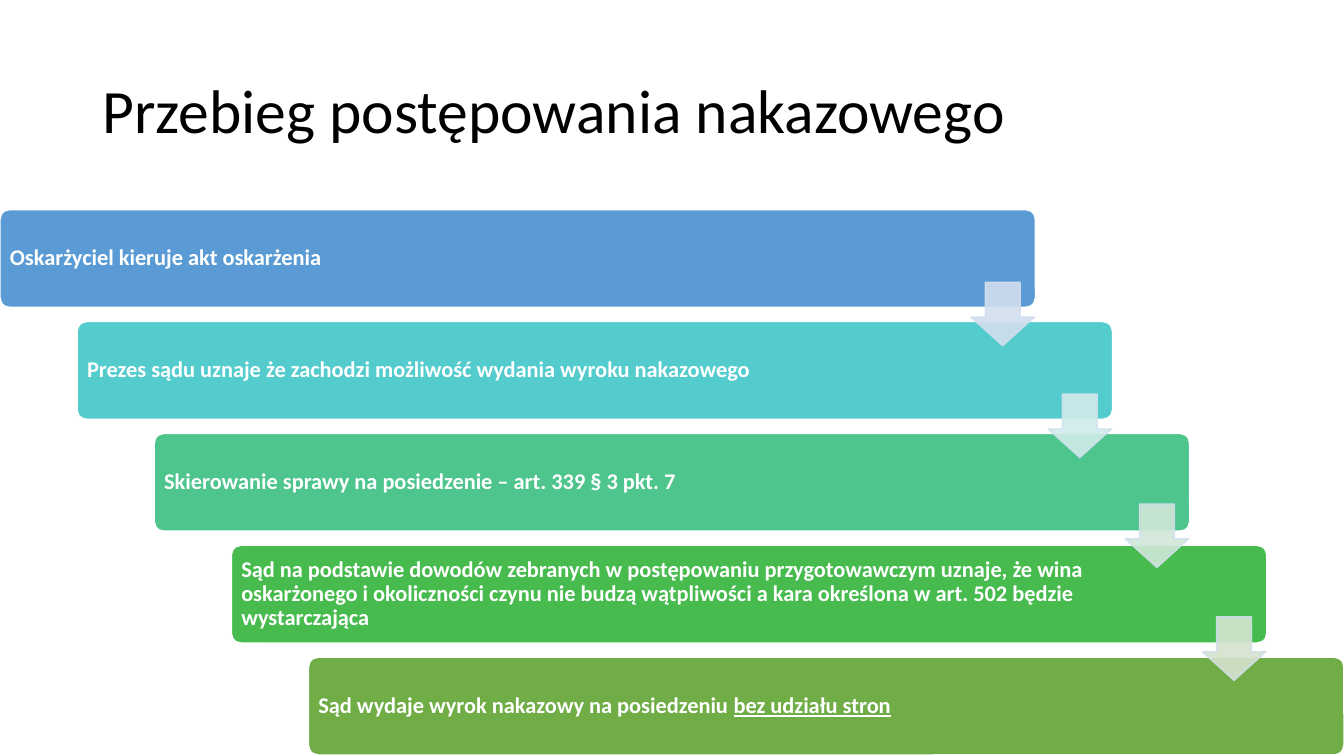
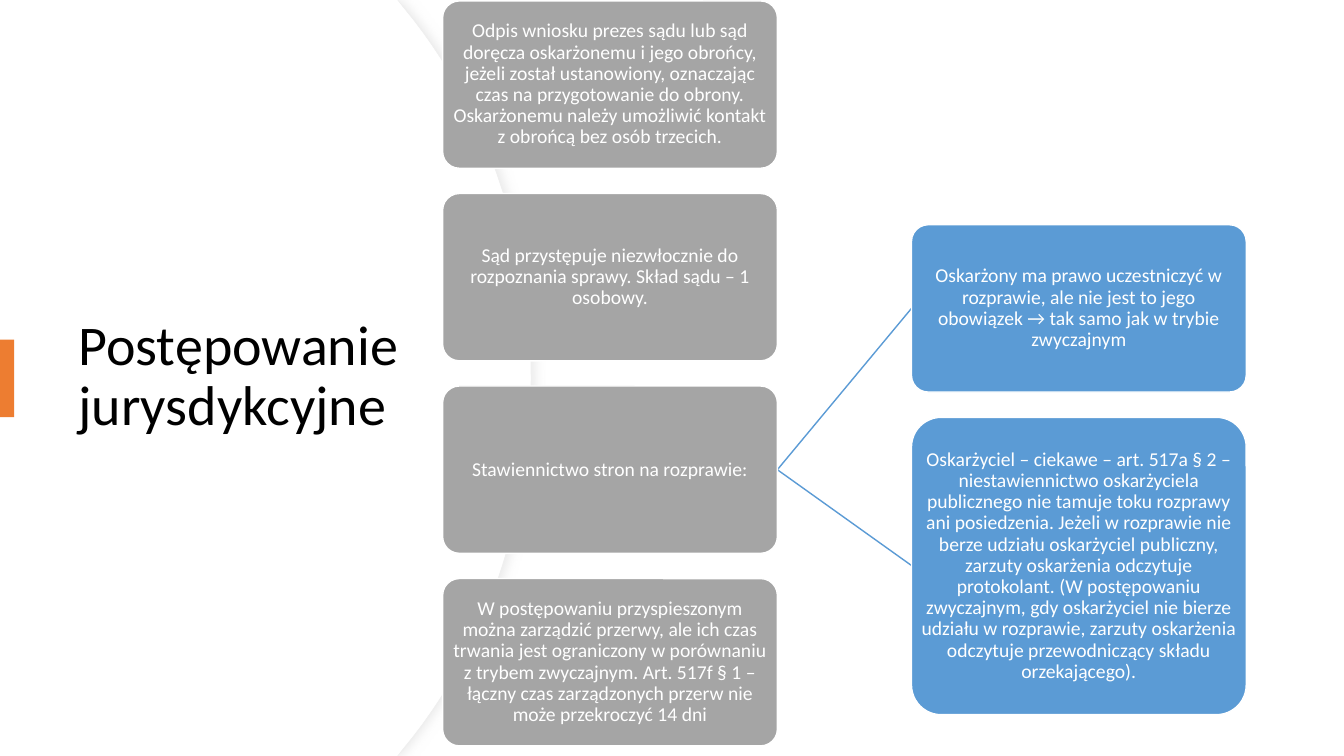
from lxml.etree import SubElement
from pptx import Presentation
from pptx.dml.color import RGBColor
from pptx.enum.shapes import MSO_CONNECTOR as Connector, MSO_SHAPE as Preset
from pptx.enum.text import MSO_ANCHOR as Anchor, PP_ALIGN as Align
from pptx.oxml.ns import qn
from pptx.util import Inches, Pt

COLORS = {
    "text": "000000", "white": "FFFFFF", "blue": "5B9BD5", "gray": "A5A5A5",
    "orange": "ED7D31", "arrow_line": "D2DEEF",
    "panel_line": "EFEFEF", "panel_shadow": "D9D9D9",
}
FONT = "Calibri"
SLIDE_WIDTH, SLIDE_HEIGHT = 13.33, 7.5


def paint(shape, fill, line=None, width=1):
    """Set a flat fill and an optional outline, without a shadow."""
    shape.shadow.inherit = False
    shape.fill.solid()
    shape.fill.fore_color.rgb = RGBColor.from_string(fill)
    if line:
        shape.line.color.rgb = RGBColor.from_string(line)
        shape.line.width = Pt(width)
    else:
        shape.line.fill.background()


def write(shape, parts, size, color, margins, align=Align.LEFT, bold=False):
    """Write one paragraph; parts holds the text of each run."""
    frame = shape.text_frame
    frame.word_wrap = True
    frame.vertical_anchor = Anchor.MIDDLE
    (frame.margin_left, frame.margin_top,
     frame.margin_right, frame.margin_bottom) = [Inches(m) for m in margins]
    para = frame.paragraphs[0]
    para.alignment = align
    para.line_spacing = 0.9
    for part in parts:
        span = para.add_run()
        span.text = part
        span.font.name = FONT
        span.font.size = Pt(size)
        span.font.bold = bold
        span.font.color.rgb = RGBColor.from_string(color)


deck = Presentation()
deck.slide_width, deck.slide_height = Inches(SLIDE_WIDTH), Inches(SLIDE_HEIGHT)
blank = deck.slide_layouts[6]
TITLE_MARGINS = (0.1, 0.05, 0.1, 0.05)

# Slide 1: staircase of steps
page = deck.slides.add_slide(blank)
title = page.shapes.add_textbox(Inches(0.92), Inches(0.4), Inches(11.5), Inches(1.45))
write(title, ["Przebieg postępowania nakazowego"], 44, COLORS["text"], TITLE_MARGINS)

steps = [
    ("5B9BD5", ["Oskarżyciel kieruje akt oskarżenia"]),
    ("54CCCD", ["Prezes sądu uznaje że zachodzi możliwość wydania wyroku nakazowego"]),
    ("4DC58D", ["Skierowanie sprawy na posiedzenie – art. 339 § 3 pkt. 7"]),
    ("48BB4F", ["Sąd na podstawie dowodów zebranych w postępowaniu przygotowawczym uznaje, "
                "że wina oskarżonego i okoliczności czynu nie budzą wątpliwości a kara "
                "określona w art. 502 będzie wystarczająca"]),
    ("70AD47", ["Sąd wydaje wyrok nakazowy na posiedzeniu ", "bez udziału stron"]),
]
step_width, step_height = 10.27, 0.97
shift = (SLIDE_WIDTH - step_width) / (len(steps) - 1)
for index, (fill, parts) in enumerate(steps):
    box = page.shapes.add_shape(
        Preset.ROUNDED_RECTANGLE, Inches(index * shift), Inches(2.08 + index * 1.11),
        Inches(step_width), Inches(step_height))
    box.adjustments[0] = 0.1
    paint(box, fill, COLORS["white"])
    write(box, parts, 16, COLORS["white"], (0.07, 0.07, 1.47, 0.07), bold=True)
box.text_frame.paragraphs[0].runs[-1].font.underline = True

# Translucent arrows between the steps
arrows = [("D2DEEF", 2.8), ("D0ECEA", 3.91), ("D0E7D8", 5), ("D5E3CF", 6.12)]
for index, (fill, top) in enumerate(arrows):
    arrow = page.shapes.add_shape(
        Preset.DOWN_ARROW, Inches(9.63 + index * shift), Inches(top),
        Inches(0.63), Inches(0.63))
    arrow.adjustments[0], arrow.adjustments[1] = 0.55, 0.45
    paint(arrow, fill, COLORS["arrow_line"])
    for color in arrow._element.spPr.iter(qn("a:srgbClr")):
        SubElement(color, qn("a:alpha"), val="90000")

# Slide 2: white panel with a curved right edge, in two layers
page = deck.slides.add_slide(blank)
for edge, line in ((5.27, COLORS["panel_line"]), (5.26, None)):
    curve = [(edge - 1.26, 0.08), (edge - 0.48, 1.02), (edge, 2.32), (edge, 3.75)]
    upper = []
    for number in range(25):
        t = number / 24
        weights = ((1 - t) ** 3, 3 * t * (1 - t) ** 2, 3 * t * t * (1 - t), t ** 3)
        upper.append([sum(w * point[axis] for w, point in zip(weights, curve))
                      for axis in (0, 1)])
    lower = [(x, SLIDE_HEIGHT - y) for x, y in reversed(upper[:-1])]
    outline = [(3.94, 0), *upper, *lower, (3.94, SLIDE_HEIGHT), (0, SLIDE_HEIGHT)]
    builder = page.shapes.build_freeform(0, 0)
    builder.add_line_segments([(Inches(x), Inches(y)) for x, y in outline], close=True)
    panel = builder.convert_to_shape()
    paint(panel, COLORS["white"], line, 0.75)
    if line:
        effects = panel._element.spPr.find(qn("a:effectLst"))
        shadow = SubElement(effects, qn("a:outerShdw"), blurRad=str(Pt(7)),
                            dist=str(Pt(3)), dir="0", algn="l", rotWithShape="0")
        color = SubElement(shadow, qn("a:srgbClr"), val=COLORS["panel_shadow"])
        SubElement(color, qn("a:alpha"), val="50000")

# Title and accent bar
title = page.shapes.add_textbox(Inches(0.68), Inches(1.27), Inches(3.94), Inches(4.95))
write(title, ["Postępowanie jurysdykcyjne"], 40, COLORS["text"], TITLE_MARGINS)
accent = page.shapes.add_shape(
    Preset.RECTANGLE, 0, Inches(3.37), Inches(0.14), Inches(0.77))
paint(accent, COLORS["orange"])

# Branches from the third gray box to the blue boxes
main_left, detail_left, box_width, box_height = 4.39, 9.04, 3.32, 1.66
for end in (3.06, 5.61):
    branch = page.shapes.add_connector(
        Connector.STRAIGHT, Inches(main_left + box_width), Inches(4.66),
        Inches(detail_left), Inches(end))
    branch.line.color.rgb = RGBColor.from_string(COLORS["blue"])
    branch.line.width = Pt(1)
    SubElement(branch._element.spPr, qn("a:effectLst"))

# Gray main boxes and blue detail boxes
main_texts = [
    "Odpis wniosku prezes sądu lub sąd doręcza oskarżonemu i jego obrońcy, jeżeli "
    "został ustanowiony, oznaczając czas na przygotowanie do obrony. Oskarżonemu "
    "należy umożliwić kontakt z obrońcą bez osób trzecich.",
    "Sąd przystępuje niezwłocznie do rozpoznania sprawy. Skład sądu – 1 osobowy.",
    "Stawiennictwo stron na rozprawie:",
    "W postępowaniu przyspieszonym można zarządzić przerwy, ale ich czas trwania "
    "jest ograniczony w porównaniu z trybem zwyczajnym. Art. 517f § 1 – łączny czas "
    "zarządzonych przerw nie może przekroczyć 14 dni",
]
boxes = [(main_left, 0.01 + index * 1.91, box_height, COLORS["gray"], text)
         for index, text in enumerate(main_texts)]
boxes += [
    (detail_left, 2.23, box_height, COLORS["blue"],
     "Oskarżony ma prawo uczestniczyć w rozprawie, ale nie jest to jego obowiązek "
     "→ tak samo jak w trybie zwyczajnym"),
    (detail_left, 4.14, 2.95, COLORS["blue"],
     "Oskarżyciel – ciekawe – art. 517a § 2 – niestawiennictwo oskarżyciela "
     "publicznego nie tamuje toku rozprawy ani posiedzenia. Jeżeli w rozprawie nie "
     "berze udziału oskarżyciel publiczny, zarzuty oskarżenia odczytuje protokolant. "
     "(W postępowaniu zwyczajnym, gdy oskarżyciel nie bierze udziału w rozprawie, "
     "zarzuty oskarżenia odczytuje przewodniczący składu orzekającego)."),
]
for left, top, height, fill, text in boxes:
    box = page.shapes.add_shape(
        Preset.ROUNDED_RECTANGLE, Inches(left), Inches(top),
        Inches(box_width), Inches(height))
    box.adjustments[0] = 0.1
    paint(box, fill, COLORS["white"])
    write(box, [text], 14, COLORS["white"], (0.01,) * 4, Align.CENTER)

deck.save("out.pptx")
